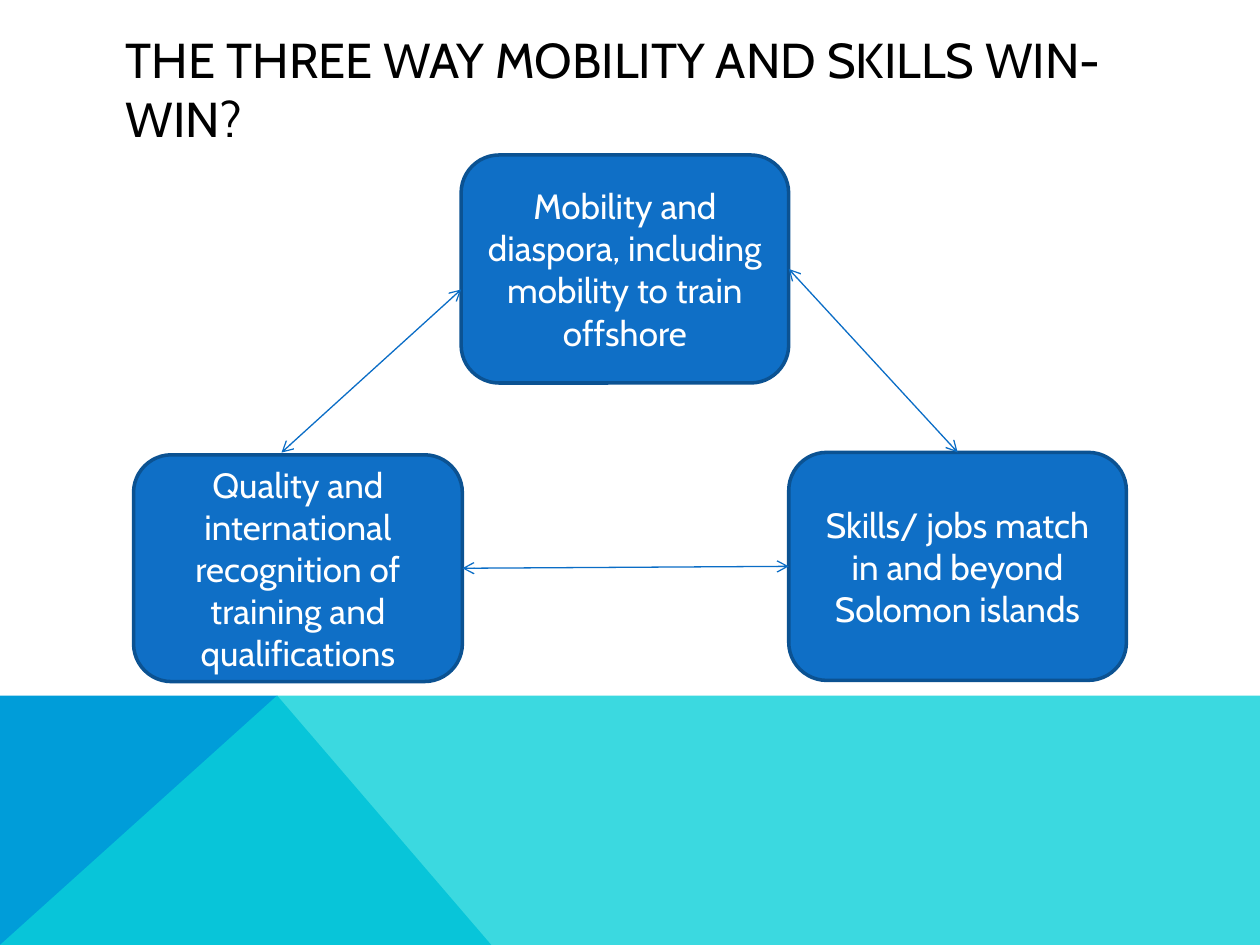
from dataclasses import dataclass
from lxml.etree import SubElement
from pptx import Presentation
from pptx.dml.color import RGBColor
from pptx.enum.shapes import MSO_CONNECTOR, MSO_SHAPE
from pptx.enum.text import MSO_ANCHOR, PP_ALIGN
from pptx.oxml.ns import qn
from pptx.util import Inches, Pt


@dataclass(frozen=True)
class Theme:
    font: str = "Cabin"
    head: int = 28
    body: int = 20
    edge: float = 2
    wire: float = 0.75
    ink: str = "000000"
    pale: str = "FFFFFF"
    node: str = "0F6FC6"
    rim: str = "0B5292"
    link: str = "0A6DC6"
    deep: str = "009DD9"
    aqua: str = "0BD0D9"
    veil: int = 80


THEME = Theme()
COLS, ROWS = 100, 75
WIDE, HIGH = Inches(10), Inches(7.5)


def place(x, y):
    return round(x * WIDE / COLS), round(y * HIGH / ROWS)


def tint(code):
    return RGBColor.from_string(code)


def paint(fill, code):
    fill.solid()
    fill.fore_color.rgb = tint(code)


def write(shape, text, size, code, align):
    frame = shape.text_frame
    frame.word_wrap = True
    frame.vertical_anchor = MSO_ANCHOR.MIDDLE
    para = frame.paragraphs[0]
    para.alignment = align
    run = para.add_run()
    run.text = text
    run.font.name = THEME.font
    run.font.size = Pt(size)
    run.font.color.rgb = tint(code)


def facet(slide, box, points, code, alpha=100):
    x, y, w, h = box
    spots = [place(x + w * u, y + h * v) for u, v in points]
    pen = slide.shapes.build_freeform(*spots[0], scale=1.0)
    pen.add_line_segments(spots[1:], close=True)
    shape = pen.convert_to_shape()
    shape.shadow.inherit = False
    paint(shape.fill, code)
    shape.line.fill.background()
    if alpha < 100:
        color = shape.element.spPr.find(qn("a:solidFill"))[0]
        SubElement(color, qn("a:alpha"), val=str(alpha * 1000))


def base(slide, box):
    peak = (0.22, 0)
    facet(slide, box, [(0, 1), (0, 0), peak, (0.39, 1)], THEME.deep)
    facet(slide, box, [(0, 1), peak, (1, 0), (1, 1)], THEME.aqua, THEME.veil)


def title(slide, box, text):
    x, y, w, h = box
    shape = slide.shapes.add_textbox(*place(x, y), *place(w, h))
    write(shape, text, THEME.head, THEME.ink, PP_ALIGN.LEFT)


def node(slide, box, text):
    x, y, w, h = box
    shape = slide.shapes.add_shape(
        MSO_SHAPE.ROUNDED_RECTANGLE, *place(x, y), *place(w, h))
    shape.shadow.inherit = False
    paint(shape.fill, THEME.node)
    shape.line.color.rgb = tint(THEME.rim)
    shape.line.width = Pt(THEME.edge)
    write(shape, text, THEME.body, THEME.pale, PP_ALIGN.CENTER)


def spot(box, u, v):
    x, y, w, h = box
    return place(x + w * u, y + h * v)


def link(slide, start, end):
    wire = slide.shapes.add_connector(MSO_CONNECTOR.STRAIGHT, *start, *end)
    wire.line.color.rgb = tint(THEME.link)
    wire.line.width = Pt(THEME.wire)
    props = wire.element.spPr
    for tip in ("a:headEnd", "a:tailEnd"):
        SubElement(props.find(qn("a:ln")), qn(tip), type="arrow")
    SubElement(props, qn("a:effectLst"))


def cycle(slide, box, texts):
    x, y, w, h = box
    top = (x + 26, y, 26, 18.1)
    left = (x, y + h - 18, 26.1, 18)
    right = (x + w - 26.8, y + h - 18.2, 26.8, 18.1)
    for part, text in zip((top, left, right), texts):
        node(slide, part, text)
    link(slide, spot(top, 0, 0.59), spot(left, 0.45, -0.01))
    link(slide, spot(top, 1, 0.5), spot(right, 0.5, 0))
    link(slide, spot(left, 1, 0.5), spot(right, 0, 0.5))


def main():
    deck = Presentation()
    deck.slide_width, deck.slide_height = WIDE, HIGH
    slide = deck.slides.add_slide(deck.slide_layouts[6])
    base(slide, (0, 55.2, COLS, ROWS - 55.2))
    title(slide, (9, 4, 82.2, 6), "THE THREE WAY MOBILITY AND SKILLS WIN-WIN?")
    cycle(slide, (10.6, 12.3, 78.8, 41.8), (
        "Mobility and diaspora, including mobility to train offshore",
        "Quality and international recognition of training and qualifications",
        "Skills/ jobs match in and beyond Solomon islands"))
    deck.save("out.pptx")


if __name__ == "__main__":
    main()
